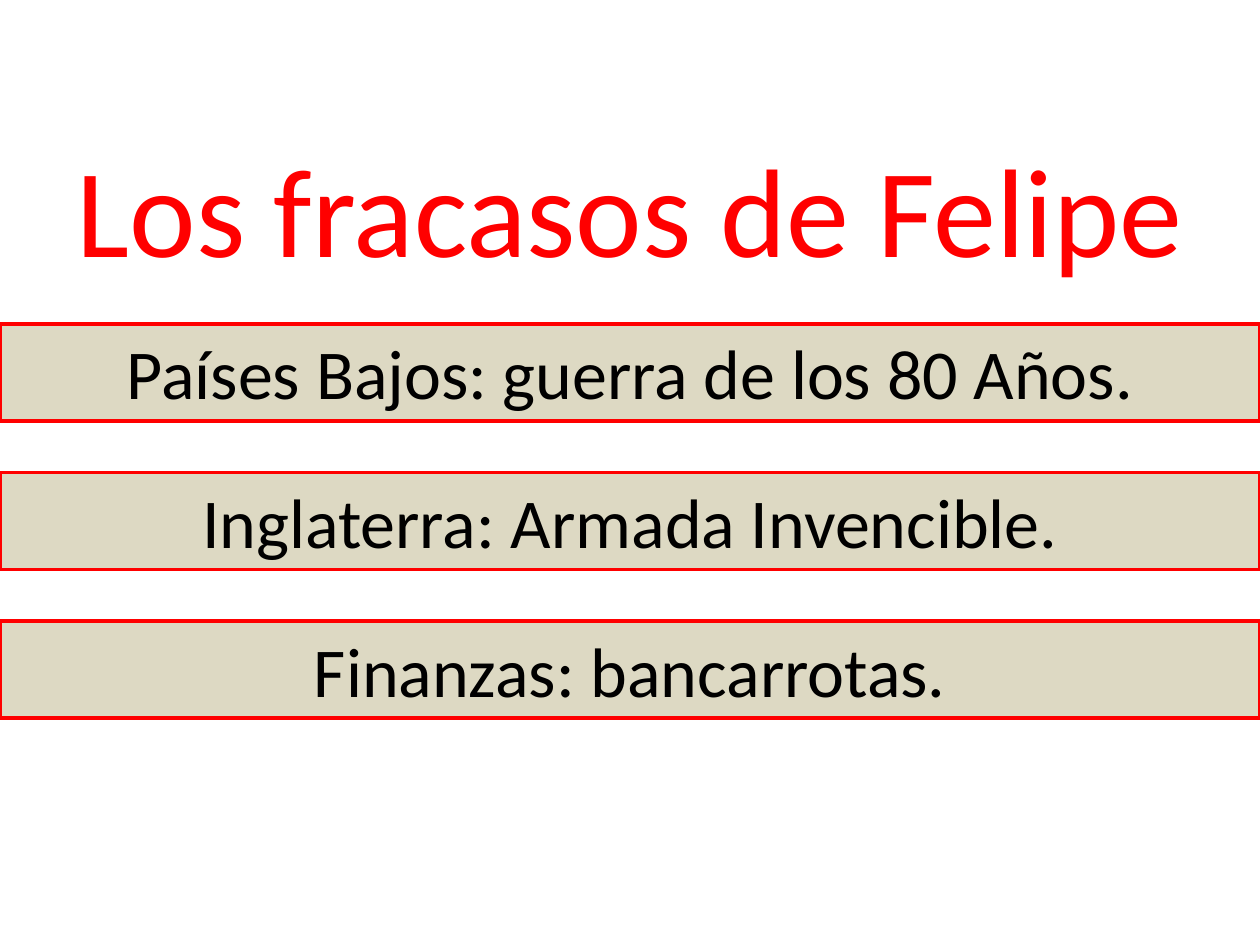
from pptx import Presentation
from pptx import util as u
from pptx.dml.color import RGBColor
from pptx.enum import shapes, text

WIDE, HIGH = 10, 7.5
RED, SAND, BLACK = "FF0000", "DDD9C3", "000000"
FAILS = [
    "Países Bajos: guerra de los 80 Años.",
    "Inglaterra: Armada Invencible.",
    "Finanzas: bancarrotas.",
]


def tint(code):
    return RGBColor.from_string(code)


def write(shape, words, size=40, color=BLACK, font="Calibri"):
    frame = shape.text_frame
    frame.word_wrap = True
    frame.auto_size = text.MSO_AUTO_SIZE.SHAPE_TO_FIT_TEXT
    frame.vertical_anchor = text.MSO_ANCHOR.TOP
    para = frame.paragraphs[0]
    para.alignment = text.PP_ALIGN.CENTER
    run = para.add_run()
    run.text = words
    run.font.size = u.Pt(size)
    run.font.name = font
    run.font.color.rgb = tint(color)


def head(slide, box, words):
    title = slide.shapes.title
    title.left, title.top, title.width, title.height = map(u.Inches, box)
    write(title, words, size=72, color=RED)


def bars(slide, box, items, pitch):
    left, top, width, height = box
    for row, words in enumerate(items):
        place = (left, top + row * pitch, width, height)
        bar = slide.shapes.add_shape(
            shapes.MSO_SHAPE.RECTANGLE, *map(u.Inches, place))
        bar.shadow.inherit = False
        bar.fill.solid()
        bar.fill.fore_color.rgb = tint(SAND)
        bar.line.color.rgb = tint(RED)
        bar.line.width = u.Pt(2)
        write(bar, words)


def main():
    deck = Presentation()
    deck.slide_width, deck.slide_height = u.Inches(WIDE), u.Inches(HIGH)
    slide = deck.slides.add_slide(deck.slide_layouts.get_by_name("Title Only"))

    # Title across the full width
    head(slide, (0, 0.99, WIDE, 1.31), "Los fracasos de Felipe")

    # Stack of equally spaced bars
    bars(slide, (0, 2.57, WIDE, 0.77), FAILS, pitch=1.18)

    deck.save("out.pptx")


if __name__ == "__main__":
    main()
